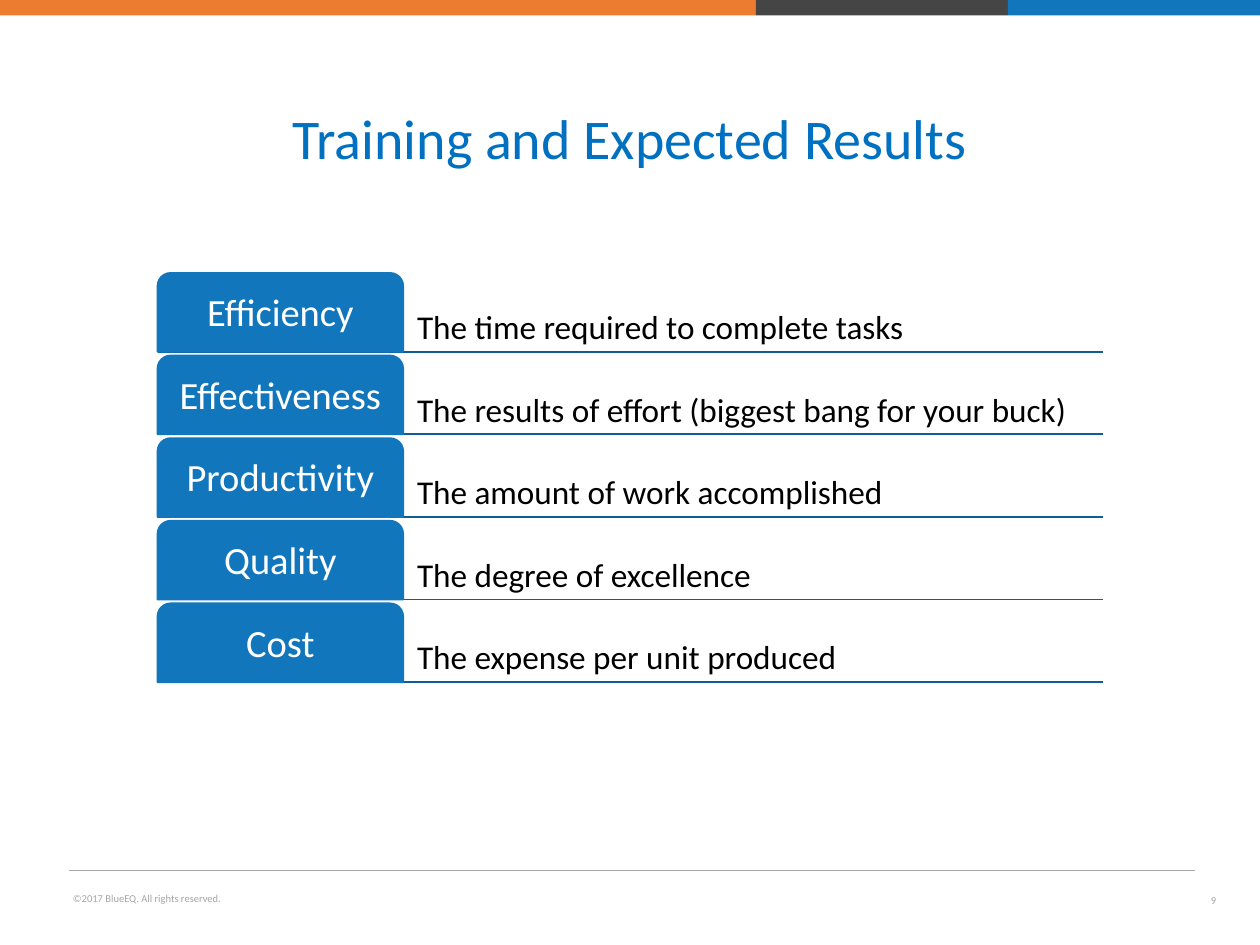
from dataclasses import dataclass

from lxml import etree
from pptx import Presentation
from pptx.dml.color import RGBColor
from pptx.enum.shapes import MSO_CONNECTOR, MSO_SHAPE
from pptx.enum.text import MSO_ANCHOR, MSO_AUTO_SIZE, PP_ALIGN
from pptx.oxml.ns import qn
from pptx.util import Pt

LEFT, CENTER = PP_ALIGN.LEFT, PP_ALIGN.CENTER
TOP, MIDDLE, BOTTOM = MSO_ANCHOR.TOP, MSO_ANCHOR.MIDDLE, MSO_ANCHOR.BOTTOM
NO_AUTOFIT = MSO_AUTO_SIZE.NONE
STRAIGHT = MSO_CONNECTOR.STRAIGHT
RECTANGLE, TAB = MSO_SHAPE.RECTANGLE, MSO_SHAPE.ROUND_2_SAME_RECTANGLE

# Content
TITLE = "Training and Expected Results"
RESULTS = [
    ("Efficiency", "The time required to complete tasks"),
    ("Effectiveness", "The results of effort (biggest bang for your buck)"),
    ("Productivity", "The amount of work accomplished"),
    ("Quality", "The degree of excellence"),
    ("Cost", "The expense per unit produced"),
]
COPYRIGHT = "©2017 BlueEQ. All rights reserved."
PAGE_NUMBER = "9"


@dataclass(frozen=True)
class Theme:
    font: str = "Calibri"
    title: str = "0070C0"
    orange: str = "EC7C2F"
    charcoal: str = "454545"
    blue: str = "1176BB"
    rule: str = "0E5E96"
    muted: str = "A6A6A6"
    text: str = "000000"
    on_blue: str = "FFFFFF"
    title_size: float = 32
    label_size: float = 22
    body_size: float = 19
    footer_size: float = 6


theme = Theme()

# Layout, in points
PAGE_WIDTH, PAGE_HEIGHT = 720, 540
BAND_HEIGHT = 8.8
BANDS = [(theme.orange, 432), (theme.charcoal, 144), (theme.blue, 144)]
LIST_LEFT, LIST_TOP, LIST_WIDTH = 90, 156, 540
TAB_WIDTH, ROW_HEIGHT, ROW_PITCH = 140.4, 45, 47.2


def place(shape, left, top, width, height):
    shape.left, shape.top = Pt(left), Pt(top)
    shape.width, shape.height = Pt(width), Pt(height)


def write(shape, text, size, color, align, anchor, insets=(7.2, 3.6, 7.2, 3.6), spacing=1.0):
    frame = shape.text_frame
    frame.text = text
    frame.word_wrap = True
    frame.auto_size = NO_AUTOFIT
    frame.vertical_anchor = anchor
    (frame.margin_left, frame.margin_top,
     frame.margin_right, frame.margin_bottom) = map(Pt, insets)
    para = frame.paragraphs[0]
    para.alignment = align
    para.line_spacing = spacing
    font = para.runs[0].font
    font.name, font.size = theme.font, Pt(size)
    font.color.rgb = RGBColor.from_string(color)


def add_text(page, bounds, *args, **options):
    box = page.shapes.add_textbox(*map(Pt, bounds))
    write(box, *args, **options)


def add_block(page, kind, bounds, color):
    shape = page.shapes.add_shape(kind, *map(Pt, bounds))
    shape.shadow.inherit = False
    shape.fill.solid()
    shape.fill.fore_color.rgb = RGBColor.from_string(color)
    shape.line.fill.background()
    return shape


def add_rule(page, left, right, y, color, weight):
    rule = page.shapes.add_connector(STRAIGHT, Pt(left), Pt(y), Pt(right), Pt(y))
    rule.line.color.rgb = RGBColor.from_string(color)
    rule.line.width = Pt(weight)
    etree.SubElement(rule._element.spPr, qn("a:effectLst"))


def add_frame(page):
    # Colour band along the top
    left = 0
    for color, width in BANDS:
        add_block(page, RECTANGLE, (left, 0, width, BAND_HEIGHT), color)
        left += width
    # Footer
    add_rule(page, 39.6, 682.6, 497.4, theme.muted, 0.25)
    add_text(page, (34.6, 506, 306, 14.4), COPYRIGHT, theme.footer_size, theme.muted, LEFT, TOP)
    add_text(page, (677.6, 504.8, 31.6, 19.4), PAGE_NUMBER, theme.footer_size, theme.muted,
             CENTER, MIDDLE, insets=(5.8, 2.9, 5.8, 2.9))


def add_result(page, index, label, meaning):
    top = LIST_TOP + index * ROW_PITCH
    add_rule(page, LIST_LEFT, LIST_LEFT + LIST_WIDTH, top + ROW_HEIGHT, theme.rule, 1)
    # Tab with its label
    tab = add_block(page, TAB, (LIST_LEFT, top, TAB_WIDTH, ROW_HEIGHT), theme.blue)
    tab.line.color.rgb = RGBColor.from_string(theme.blue)
    tab.line.width = Pt(1)
    write(tab, label, theme.label_size, theme.on_blue, CENTER, MIDDLE,
          insets=(3.6, 3.6, 3.6, 3.6), spacing=0.9)
    # Meaning beside the tab
    add_text(page, (LIST_LEFT + TAB_WIDTH, top, LIST_WIDTH - TAB_WIDTH, ROW_HEIGHT), meaning,
             theme.body_size, theme.text, LEFT, BOTTOM, insets=(7.9, 2.9, 2.9, 2.9), spacing=0.9)


def main():
    deck = Presentation()
    deck.slide_width, deck.slide_height = Pt(PAGE_WIDTH), Pt(PAGE_HEIGHT)
    page = deck.slides.add_slide(deck.slide_layouts[5])
    add_frame(page)
    title = page.shapes.title
    place(title, 49.7, 28.8, 620.6, 104.4)
    write(title, TITLE, theme.title_size, theme.title, CENTER, MIDDLE, spacing=0.9)
    for index, (label, meaning) in enumerate(RESULTS):
        add_result(page, index, label, meaning)
    deck.save("out.pptx")


if __name__ == "__main__":
    main()
